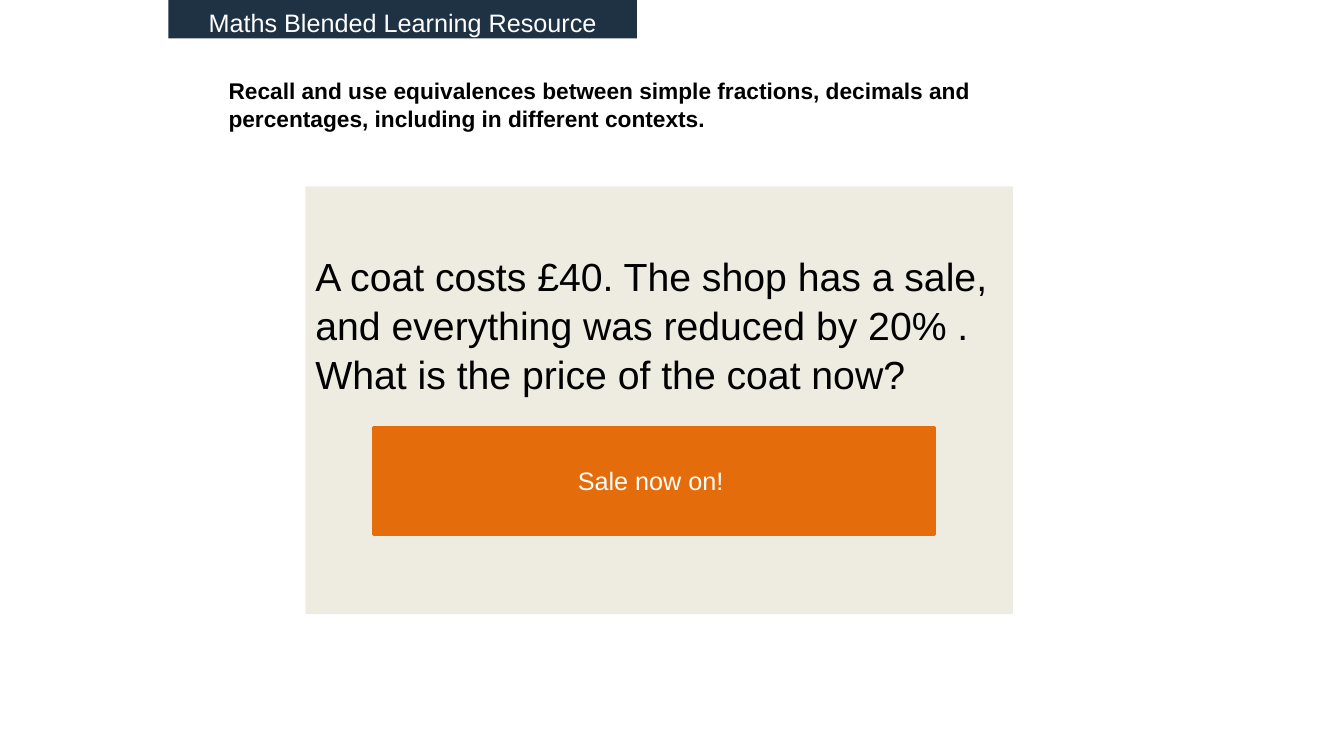
from dataclasses import dataclass
from typing import Optional

from pptx import Presentation
from pptx.dml.color import RGBColor
from pptx.enum.shapes import MSO_SHAPE
from pptx.enum.text import MSO_ANCHOR, PP_ALIGN
from pptx.slide import Slide
from pptx.util import Pt

FONT = "Arial"
BLACK, WHITE = "000000", "FFFFFF"
NAVY, CREAM, ORANGE = "1F3244", "EEECE1", "E46C0A"


@dataclass(frozen=True)
class Panel:
    """A rectangle with text; lengths are in points."""
    text: str
    left: float
    top: float
    width: float
    height: float
    size: float
    color: str
    fill: Optional[str] = None
    outline: Optional[str] = None
    bold: bool = False
    align: PP_ALIGN = PP_ALIGN.LEFT
    anchor: MSO_ANCHOR = MSO_ANCHOR.TOP
    inset_top: float = 3.6
    inset_right: float = 7.2
    inset_bottom: float = 3.6
    line_spacing: float = 1.0


OBJECTIVE = Panel(
    "Recall and use equivalences between simple fractions, decimals and "
    "percentages, including in different contexts.",
    156.2, 66.2, 648, 46, 16.2, BLACK, bold=True,
    anchor=MSO_ANCHOR.MIDDLE, inset_right=20, inset_bottom=34,
    line_spacing=1.04)
BANNER = Panel(
    "Maths Blended Learning Resource", 120.2, 0, 334.8, 27.4, 18, WHITE,
    fill=NAVY, align=PP_ALIGN.CENTER, inset_top=5)
QUESTION = Panel(
    "A coat costs £40. The shop has a sale, and everything was reduced "
    "by 20% . What is the price of the coat now?",
    218.2, 133.2, 505.4, 305.5, 28, BLACK, fill=CREAM, inset_top=46,
    line_spacing=1.04)
SALE_SIGN = Panel(
    "Sale now on! ", 267.1, 305.3, 400.3, 76.3, 18, WHITE, fill=ORANGE,
    outline=ORANGE, align=PP_ALIGN.CENTER, anchor=MSO_ANCHOR.MIDDLE)


def rgb(color: str) -> RGBColor:
    return RGBColor.from_string(color)


def draw_panel(slide: Slide, panel: Panel) -> None:
    box = (Pt(panel.left), Pt(panel.top), Pt(panel.width), Pt(panel.height))
    if panel.fill:
        shape = slide.shapes.add_shape(MSO_SHAPE.RECTANGLE, *box)
        shape.shadow.inherit = False
        shape.fill.solid()
        shape.fill.fore_color.rgb = rgb(panel.fill)
        if panel.outline:
            shape.line.color.rgb = rgb(panel.outline)
            shape.line.width = Pt(2)
        else:
            shape.line.fill.background()
    else:
        shape = slide.shapes.add_textbox(*box)

    frame = shape.text_frame
    frame.word_wrap = True
    frame.vertical_anchor = panel.anchor
    frame.margin_top = Pt(panel.inset_top)
    frame.margin_right = Pt(panel.inset_right)
    frame.margin_bottom = Pt(panel.inset_bottom)
    paragraph = frame.paragraphs[0]
    paragraph.alignment = panel.align
    paragraph.line_spacing = panel.line_spacing
    run = paragraph.add_run()
    run.text = panel.text
    run.font.name = FONT
    run.font.size = Pt(panel.size)
    run.font.bold = panel.bold
    run.font.color.rgb = rgb(panel.color)


def main() -> None:
    presentation = Presentation()
    presentation.slide_width, presentation.slide_height = Pt(960), Pt(540)
    slide = presentation.slides.add_slide(presentation.slide_layouts[6])
    for panel in (OBJECTIVE, BANNER, QUESTION, SALE_SIGN):
        draw_panel(slide, panel)
    presentation.save("out.pptx")


if __name__ == "__main__":
    main()
